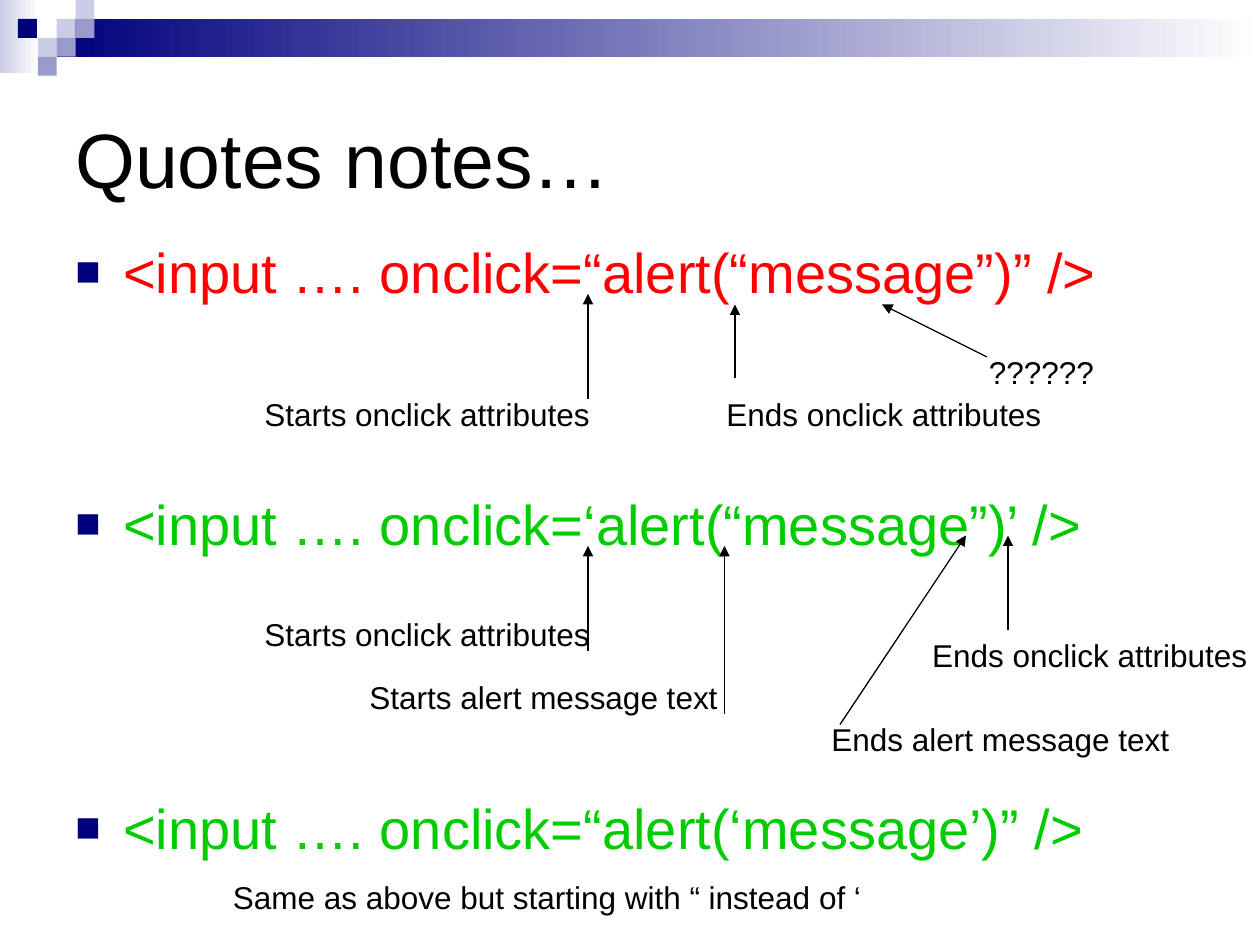
from typing import NamedTuple

from lxml.etree import SubElement
from pptx import Presentation
from pptx.dml.color import RGBColor
from pptx.enum.shapes import MSO_CONNECTOR, MSO_SHAPE
from pptx.enum.text import MSO_ANCHOR, MSO_AUTO_SIZE
from pptx.oxml.ns import qn
from pptx.util import Inches, Pt

CELL = 1 / 12  # grid of 120 columns by 90 rows
TILE = 0.15  # side of a corner tile, inches
FONT = "Arial"
COLORS = {
    "navy": "00007D", "mid": "9999CC", "pale": "CCCCE6", "white": "FFFFFF",
    "black": "000000", "red": "FF0000", "green": "00CC00",
}


class Band(NamedTuple):
    left: float
    top: float
    width: float
    height: float
    start: str


class Tile(NamedTuple):
    col: float
    row: float
    color: str


class Code(NamedTuple):
    row: float
    text: str
    color: str


class Label(NamedTuple):
    col: float
    row: float
    width: float
    text: str
    wrap: bool = False


class Arrow(NamedTuple):
    col: float
    row: float
    tip_col: float
    tip_row: float


BANDS = [
    Band(0, 0, 0.31, 0.58, "pale"),
    Band(0.45, 0.15, 9.55, 0.3, "navy"),
]
TILES = [
    Tile(3, 1, "pale"), Tile(4, 0, "pale"), Tile(4, 1, "mid"),
    Tile(2, 2, "pale"), Tile(0.95, 1, "navy"), Tile(3, 2, "mid"),
    Tile(2, 3, "mid"),
]
CODES = [
    Code(22, "<input …. onclick=“alert(“message”)” />", "red"),
    Code(46, "<input …. onclick=‘alert(“message”)’ />", "green"),
    Code(75, "<input …. onclick=“alert(‘message’)” />", "green"),
]
LABELS = [
    Label(24, 37, 33.4, "Starts onclick attributes"),
    Label(68, 37, 32.4, "Ends onclick attributes"),
    Label(24, 58, 33.4, "Starts onclick attributes"),
    Label(87.6, 60, 32.4, "Ends onclick attributes"),
    Label(34, 64, 35.6, "Starts alert message text"),
    Label(78, 68, 34.6, "Ends alert message text"),
    Label(93, 33, 12.4, "??????"),
    Label(21, 83, 69.4, "Same as above but starting with “ instead of ‘", True),
]
ARROWS = [
    Arrow(56, 38, 56, 28), Arrow(70, 36, 70, 29), Arrow(56, 62, 56, 52),
    Arrow(96, 60, 96, 51), Arrow(69, 68, 69, 52), Arrow(80, 69, 92, 51),
    Arrow(94, 34, 84, 29),
]


def rgb(name: str) -> RGBColor:
    return RGBColor.from_string(COLORS[name])


def cells(*counts: float) -> list:
    return [Inches(n * CELL) for n in counts]


def add_rect(slide, *box: float):
    rect = slide.shapes.add_shape(MSO_SHAPE.RECTANGLE, *map(Inches, box))
    rect.shadow.inherit = False
    rect.line.fill.background()
    return rect


def add_band(slide, band: Band) -> None:
    """Draw a bar that fades to white on the right."""
    fill = add_rect(slide, *band[:4]).fill
    fill.gradient()
    fill.gradient_angle = 0
    for stop, name, pos in zip(fill.gradient_stops, (band.start, "white"), (0, 1)):
        stop.color.rgb = rgb(name)
        stop.position = pos


def add_tile(slide, tile: Tile) -> None:
    fill = add_rect(slide, tile.col * TILE, tile.row * TILE, TILE, TILE).fill
    fill.solid()
    fill.fore_color.rgb = rgb(tile.color)


def add_text(slide, box: list, text: str, size: int, color: str = "black"):
    frame = slide.shapes.add_textbox(*box).text_frame
    frame.word_wrap = True
    para = frame.paragraphs[0]
    para.text = text
    para.font.name = FONT
    para.font.size = Pt(size)
    para.font.color.rgb = rgb(color)
    return frame


def add_code(slide, code: Code) -> None:
    """Write a line of code behind a square bullet."""
    frame = add_text(slide, cells(6, code.row, 108, 11), code.text, 32, code.color)
    props = frame.paragraphs[0]._p.get_or_add_pPr()
    props.set("marL", str(Inches(0.38)))
    props.set("indent", str(Inches(-0.38)))
    marks = [
        (SubElement(props, qn("a:spcBef")), "a:spcPct", "20000"),
        (SubElement(props, qn("a:buClr")), "a:srgbClr", COLORS["navy"]),
    ]
    for parent, tag, val in marks:
        SubElement(parent, qn(tag), val=val)
    SubElement(props, qn("a:buSzPct"), val="75000")
    SubElement(props, qn("a:buFont"), typeface=FONT)
    SubElement(props, qn("a:buChar"), char="■")


def add_label(slide, label: Label) -> None:
    box = cells(label.col, label.row, label.width, 4.8)
    frame = add_text(slide, box, label.text, 18)
    frame.word_wrap = label.wrap
    frame.auto_size = MSO_AUTO_SIZE.SHAPE_TO_FIT_TEXT


def add_arrow(slide, arrow: Arrow) -> None:
    link = slide.shapes.add_connector(MSO_CONNECTOR.STRAIGHT, *cells(*arrow))
    link.line.color.rgb = rgb("black")
    link.line.width = Pt(0.75)
    SubElement(link.line._get_or_add_ln(), qn("a:tailEnd"), type="triangle")
    SubElement(link._element.spPr, qn("a:effectLst"))


def main() -> None:
    deck = Presentation()
    deck.slide_width, deck.slide_height = Inches(10), Inches(7.5)
    slide = deck.slides.add_slide(deck.slide_layouts[6])
    for band in BANDS:
        add_band(slide, band)
    for tile in TILES:
        add_tile(slide, tile)
    title = add_text(slide, cells(6, 6, 108, 18), "Quotes notes…", 44)
    title.vertical_anchor = MSO_ANCHOR.MIDDLE
    for code in CODES:
        add_code(slide, code)
    for label in LABELS:
        add_label(slide, label)
    for arrow in ARROWS:
        add_arrow(slide, arrow)
    deck.save("out.pptx")


if __name__ == "__main__":
    main()
